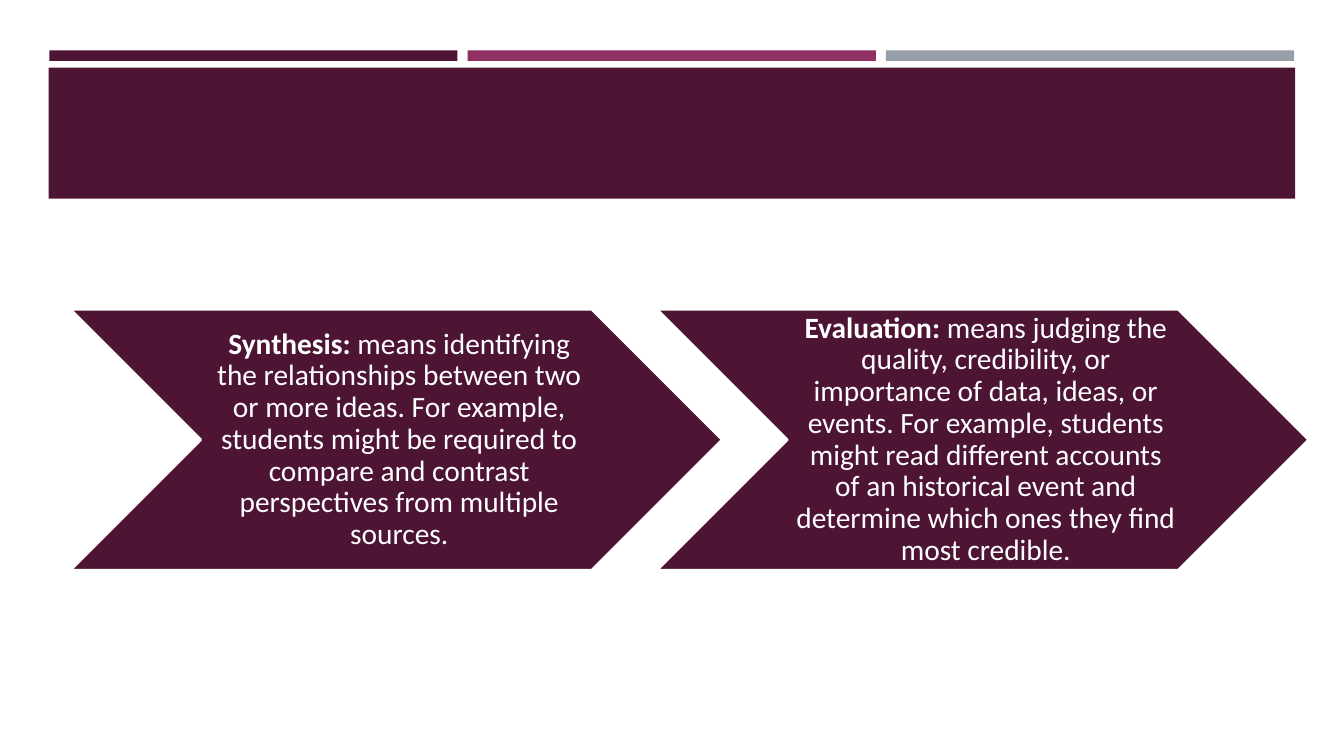
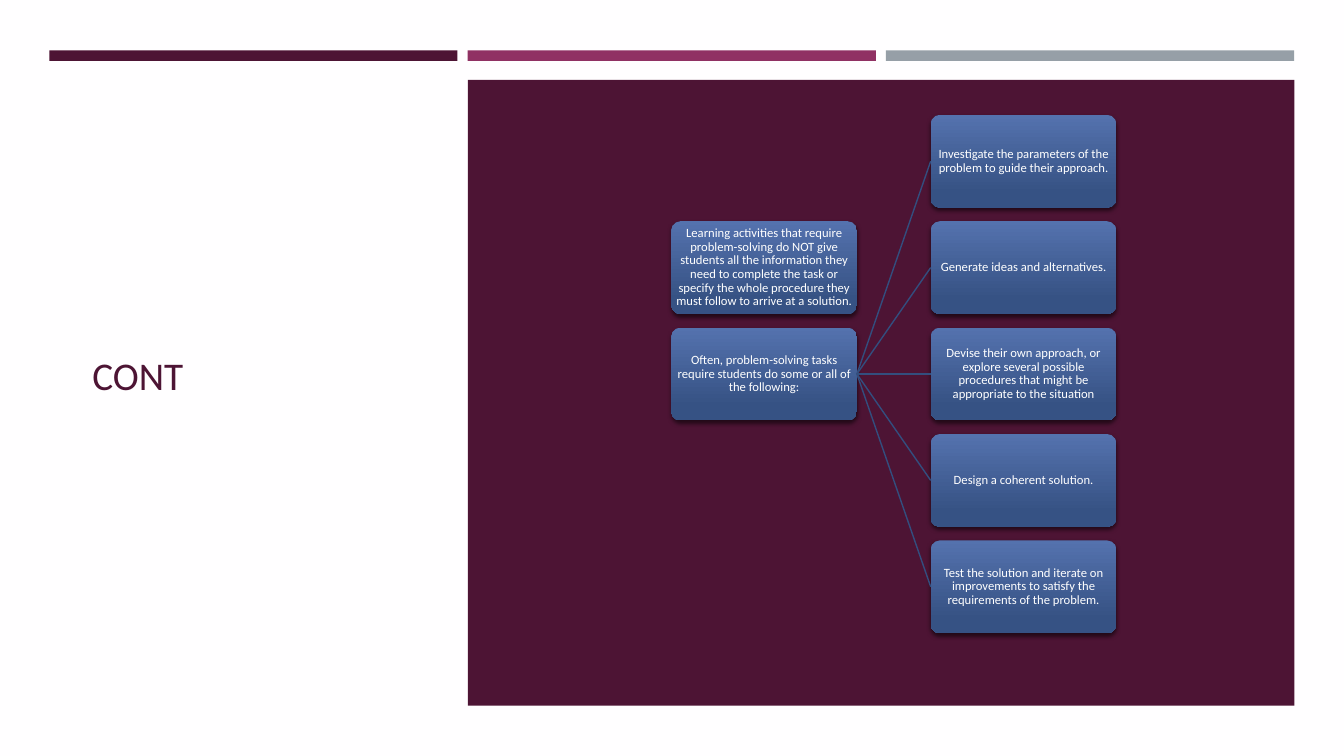
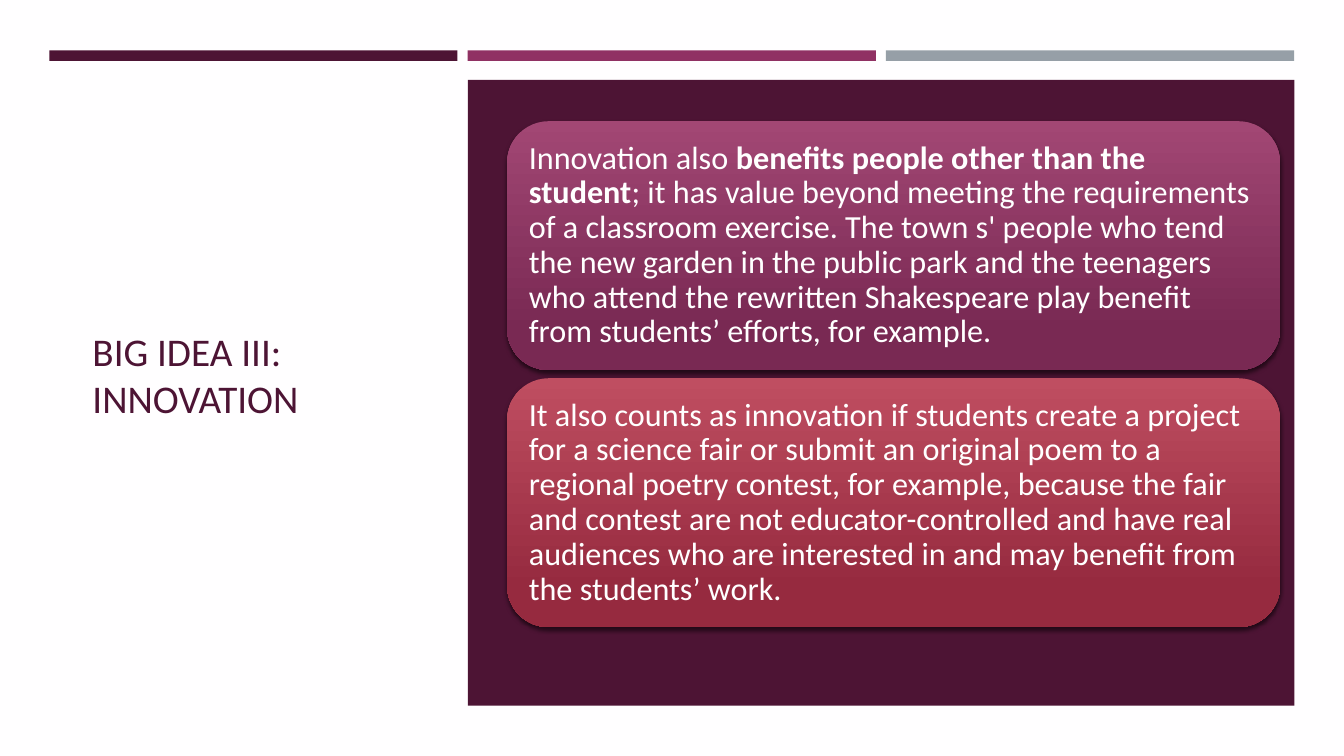
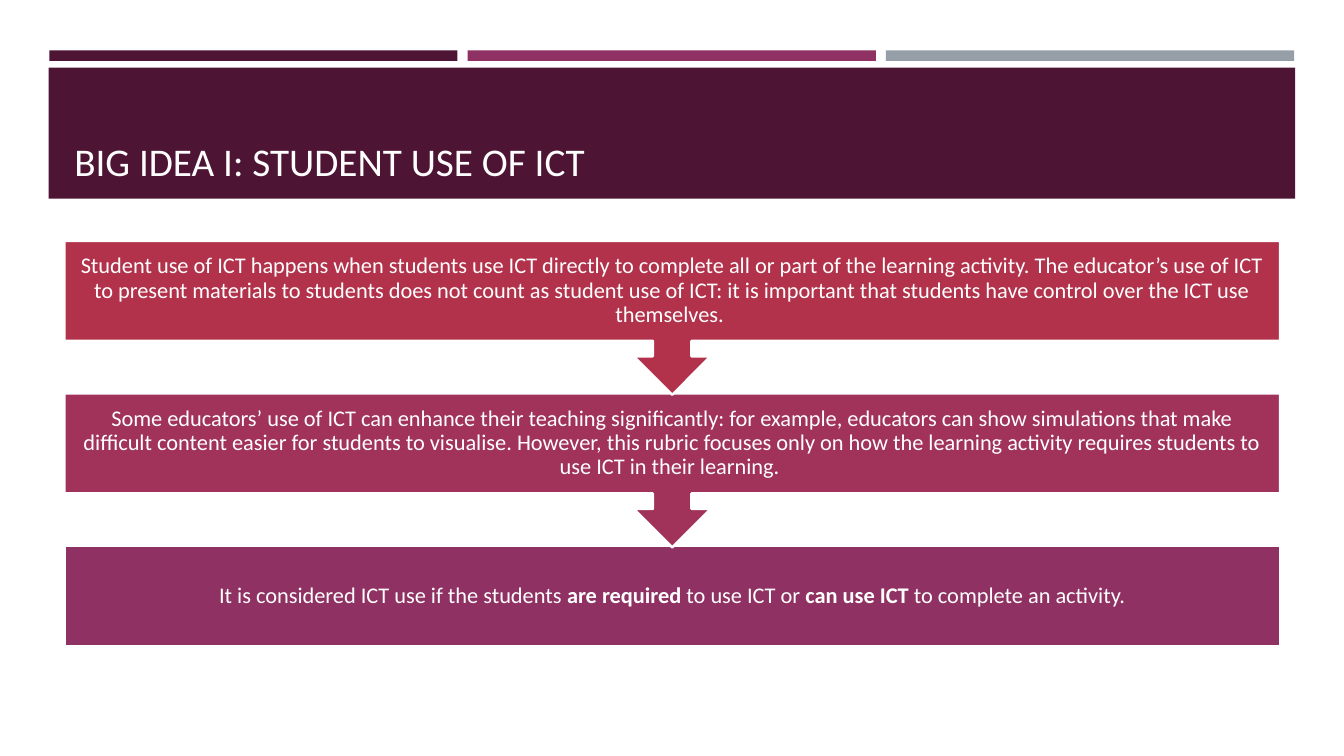
import pptx
import pptx.util
import pptx.dml.color
import pptx.enum.shapes
import pptx.enum.text
import pptx.oxml
import pptx.oxml.ns

Pt = pptx.util.Pt
KIND = pptx.enum.shapes.MSO_SHAPE
ALIGN = pptx.enum.text.PP_ALIGN
ANCHOR = pptx.enum.text.MSO_ANCHOR
SHADE = (
    "<a:effectLst %s><a:outerShdw blurRad='38100' dist='25400' dir='5400000'>"
    "<a:srgbClr val='000000'><a:alpha val='55000'/></a:srgbClr>"
    "</a:outerShdw></a:effectLst>" % pptx.oxml.ns.nsdecls("a")
)
EMPTY = "<a:effectLst %s/>" % pptx.oxml.ns.nsdecls("a")
COLORS = {
    "plum": "4D1434", "berry": "903163", "gray": "969FA7",
    "white": "FFFFFF", "paper": "FFFEFF",
    "rose": "A1325A", "red": "B2324B", "wire": "334E7E",
    "blue top": "5472AE", "blue low": "365284",
    "berry top": "A24774", "berry low": "792953",
    "red top": "BF4E61", "red low": "962A3F",
}


def color(name):
    return pptx.dml.color.RGBColor.from_string(COLORS[name])


def write(frame, text, size=28, ink="white", align=ALIGN.CENTER,
          anchor=ANCHOR.MIDDLE, inset=(7.2, 3.6, 7.2, 3.6), space=0.9):
    frame.word_wrap = True
    frame.vertical_anchor = anchor
    (frame.margin_left, frame.margin_top,
     frame.margin_right, frame.margin_bottom) = map(Pt, inset)
    para = frame.paragraphs[0]
    para.alignment = align
    para.line_spacing = space
    for index, part in enumerate(text.split("*")):
        if part:
            run = para.add_run()
            run.text = part
            font = run.font
            font.name, font.size = "Calibri", Pt(size)
            font.bold = index % 2 == 1
            font.color.rgb = color(ink)


class Deck:
    """Holds the shared style and the current slide."""

    def __init__(self):
        self.file = pptx.Presentation()
        self.file.slide_width, self.file.slide_height = Pt(960), Pt(540)

    def start(self, back="white"):
        self.slide = self.file.slides.add_slide(self.file.slide_layouts[6])
        fill = self.slide.background.fill
        fill.solid()
        fill.fore_color.rgb = color(back)
        for col, name in enumerate(("plum", "berry", "gray")):
            self.shape(KIND.RECTANGLE, 35.2 + col * 298.8, 36, 291.6, 7.5, name)

    def band(self, title=""):
        self.start()
        self.shape(KIND.RECTANGLE, 34.8, 48.4, 890.4, 93.6, "plum")
        if title:
            self.title(title, 46, 55.4, 868, 80, "paper", ANCHOR.BOTTOM)

    def panel(self, title):
        self.start("paper")
        self.shape(KIND.RECTANGLE, 334.2, 57, 590.4, 447, "plum")
        self.title(title, 59, 82, 240.5, 371, "plum", ANCHOR.MIDDLE)

    def title(self, text, left, top, width, height, ink, anchor):
        box = self.slide.shapes.add_textbox(
            Pt(left), Pt(top), Pt(width), Pt(height))
        write(box.text_frame, text, ink=ink, anchor=anchor,
              align=ALIGN.LEFT, space=1)

    def shape(self, kind, left, top, width, height, fill, edge=None):
        item = self.slide.shapes.add_shape(
            kind, Pt(left), Pt(top), Pt(width), Pt(height))
        item.shadow.inherit = False
        item.fill.solid()
        item.fill.fore_color.rgb = color(fill)
        if edge:
            item.line.color.rgb = color(edge)
            item.line.width = Pt(1.75)
        else:
            item.line.fill.background()
        return item

    def card(self, left, top, width, height, hue, round=None):
        item = self.shape(KIND.ROUNDED_RECTANGLE, left, top, width, height, "plum")
        if round:
            item.adjustments[0] = round
        item.fill.gradient()
        item.fill.gradient_angle = 270
        for stop, tone, place in zip(
                item.fill.gradient_stops, ("top", "low"), (0, 0.84)):
            stop.color.rgb = color(hue + " " + tone)
            stop.position = place
        props = item._element.spPr
        props.replace(props.find(pptx.oxml.ns.qn("a:effectLst")),
                      pptx.oxml.parse_xml(SHADE))
        return item

    def step(self, left, top, text):
        item = self.card(left, top, 132.6, 66.3, "blue", 0.1)
        write(item.text_frame, text, 9, inset=(0.7,) * 4)
        return item

    def link(self, start, end):
        wire = self.slide.shapes.add_connector(
            pptx.enum.shapes.MSO_CONNECTOR.STRAIGHT, 0, 0, 0, 0)
        wire.begin_connect(start, 3)
        wire.end_connect(end, 1)
        wire.line.color.rgb = color("wire")
        wire.line.width = Pt(1)
        wire._element.spPr.append(pptx.oxml.parse_xml(EMPTY))


def skills(deck):
    deck.band()
    texts = (
        "*Synthesis:* means identifying the relationships between two or more ideas. For example, students might be required to compare and contrast perspectives from multiple sources.",
        "*Evaluation:* means judging the quality, credibility, or importance of data, ideas, or events. For example, students might read different accounts of an historical event and determine which ones they find most credible.",
    )
    for col, text in enumerate(texts):
        item = deck.shape(KIND.CHEVRON, 50.4 + col * 419, 221, 465.4, 186.2,
                          "plum", "white")
        write(item.text_frame, text, 21, inset=(6.3, 2.1, 2.1, 2.1))


def solving(deck):
    deck.panel("CONT")
    top, pitch = 82, 76
    deck.step(479.5, top + pitch, "Learning activities that require problem-solving do NOT give students all the information they need to complete the task or specify the whole procedure they must follow to arrive at a solution.")
    root = deck.step(479.5, top + 2 * pitch, "Often, problem-solving tasks require students do some or all of the following:")
    tasks = (
        "Investigate the parameters of the problem to guide their approach.",
        "Generate ideas and alternatives.",
        "Devise their own approach, or explore several possible procedures that might be appropriate to the situation",
        "Design a coherent solution.",
        "Test the solution and iterate on improvements to satisfy the requirements of the problem.",
    )
    for row, text in enumerate(tasks):
        deck.link(root, deck.step(664.8, top + row * pitch, text))


def ideas(deck):
    deck.panel("BIG IDEA III: INNOVATION")
    cards = (
        ("berry", "Innovation also *benefits people other than the student*; it has value beyond meeting the requirements of a classroom exercise. The town s' people who tend the new garden in the public park and the teenagers who attend the rewritten Shakespeare play benefit from students’ efforts, for example."),
        ("red", "It also counts as innovation if students create a project for a science fair or submit an original poem to a regional poetry contest, for example, because the fair and contest are not educator-controlled and have real audiences who are interested in and may benefit from the students’ work."),
    )
    for row, (hue, text) in enumerate(cards):
        item = deck.card(362.2, 86.6, 552.2, 177.8, hue)
        item.top = Pt(86.6 + row * 183.6)
        write(item.text_frame, text, 23, align=ALIGN.LEFT, inset=(6.9,) * 4)


def usage(deck):
    deck.band("BIG IDEA I: STUDENT USE OF ICT")
    call, rect = KIND.DOWN_ARROW_CALLOUT, KIND.RECTANGLE
    steps = (
        (call, 110, "red", "Student use of ICT happens when students use ICT directly to complete all or part of the learning activity. The educator’s use of ICT to present materials to students does not count as student use of ICT: it is important that students have control over the ICT use themselves. "),
        (call, 110, "rose", "Some educators’ use of ICT can enhance their teaching significantly: for example, educators can show simulations that make difficult content easier for students to visualise. However, this rubric focuses only on how the learning activity requires students to use ICT in their learning. "),
        (rect, 71.4, "berry", "It is considered ICT use if the students *are required* to use ICT or *can use ICT* to complete an activity."),
    )
    for row, (kind, height, fill, text) in reversed(list(enumerate(steps))):
        item = deck.shape(kind, 46, 172 + row * 109, 868.3, height, fill, "white")
        write(item.text_frame, text, 16, inset=(8.9,) * 4)


def main():
    deck = Deck()
    for build in (skills, solving, ideas, usage):
        build(deck)
    deck.file.save("out.pptx")


if __name__ == "__main__":
    main()
